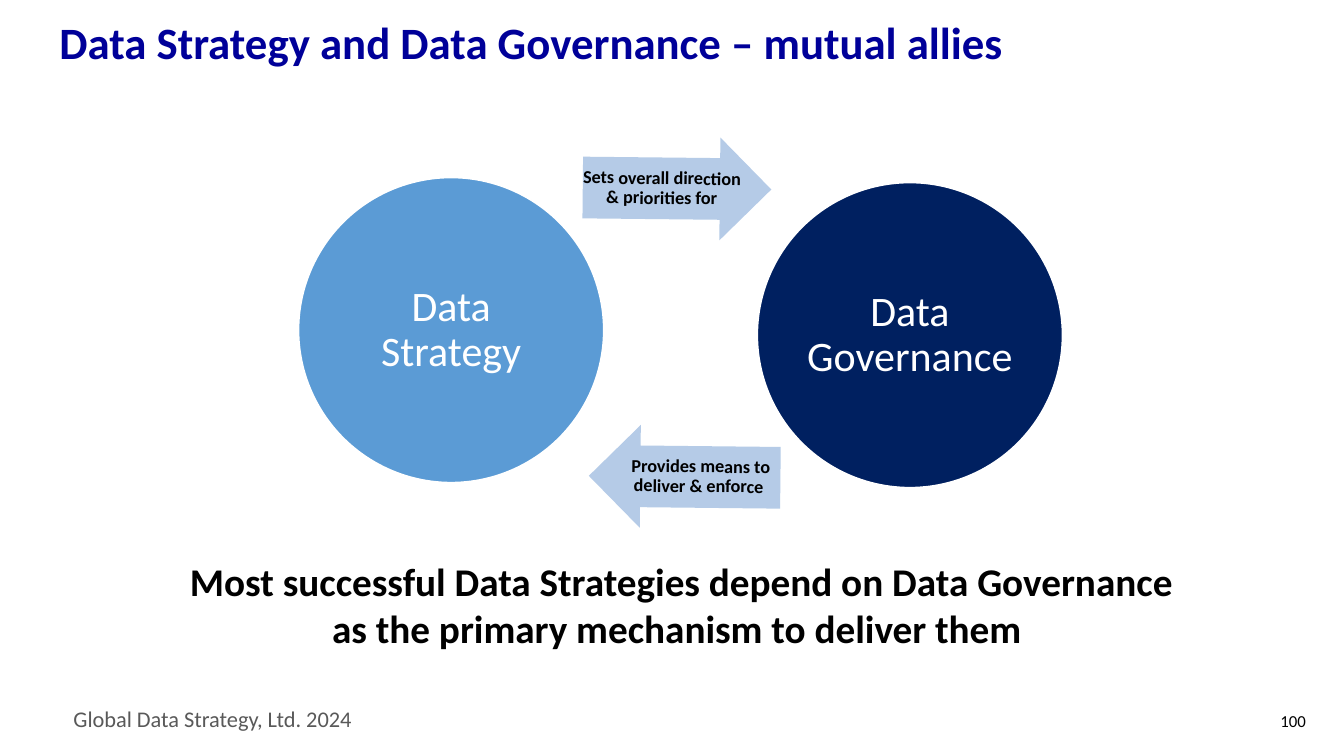
import pptx
import pptx.dml.color
import pptx.enum.shapes
import pptx.enum.text
import pptx.util

Inches = pptx.util.Inches
Align = pptx.enum.text.PP_ALIGN
Anchor = pptx.enum.text.MSO_ANCHOR
Preset = pptx.enum.shapes.MSO_SHAPE

CIRCLE_SIZE = 3.03
CIRCLE_LABEL_SIZE = 2.14
ARROW_HEIGHT = 1.02
ARROW_LABEL_HEIGHT = 0.61
TILT = 0.6

TITLE = "Data Strategy and Data Governance – mutual allies"
MESSAGE = ("Most successful Data Strategies depend on Data Governance "
           "as the primary mechanism to deliver them ")
FOOTER = "Global Data Strategy, Ltd. 2024"
PAGE_NUMBER = "100"

CIRCLES = [
    {"text": "Data Strategy", "left": 2.96, "top": 1.76, "fill": "5B9BD5"},
    {"text": "Data Governance ", "left": 7.51, "top": 1.81, "fill": "002060"},
]
ARROWS = [
    {"text": "Sets overall direction & priorities for", "left": 5.78, "top": 1.36,
     "width": 1.87, "turn": 0, "label_left": 5.78, "label_width": 1.57},
    {"text": "Provides means to deliver & enforce ", "left": 5.84, "top": 4.22,
     "width": 1.9, "turn": 180, "label_left": 6.15, "label_width": 1.6},
]


def color(value):
    return pptx.dml.color.RGBColor.from_string(value)


def add_text(slide, text, box, size, font_color="000000", bold=False,
             align=Align.LEFT, anchor=Anchor.TOP, margin=None, spacing=None):
    shape = slide.shapes.add_textbox(*map(Inches, box))
    frame = shape.text_frame
    frame.text = text
    frame.word_wrap = True
    frame.vertical_anchor = anchor
    if margin is not None:
        frame.margin_left = frame.margin_right = Inches(margin)
        frame.margin_top = frame.margin_bottom = Inches(margin)
    paragraph = frame.paragraphs[0]
    paragraph.alignment = align
    if spacing:
        paragraph.line_spacing = spacing
    font = paragraph.runs[0].font
    font.name = "Calibri"
    font.size = pptx.util.Pt(size)
    font.bold = bold
    font.color.rgb = color(font_color)
    return shape


def add_filled_shape(slide, preset, box, fill):
    shape = slide.shapes.add_shape(preset, *map(Inches, box))
    shape.shadow.inherit = False
    shape.fill.solid()
    shape.fill.fore_color.rgb = color(fill)
    shape.line.fill.background()
    return shape


def add_circle(slide, circle):
    left, top = circle["left"], circle["top"]
    shape = add_filled_shape(slide, Preset.OVAL,
                             (left, top, CIRCLE_SIZE, CIRCLE_SIZE), circle["fill"])
    shape.line.color.rgb = color("FFFFFF")
    shape.line.width = pptx.util.Pt(1.35)
    inset = (CIRCLE_SIZE - CIRCLE_LABEL_SIZE) / 2
    add_text(slide, circle["text"],
             (left + inset, top + inset, CIRCLE_LABEL_SIZE, CIRCLE_LABEL_SIZE),
             30, "FFFFFF", align=Align.CENTER, anchor=Anchor.MIDDLE,
             margin=0.04, spacing=0.9)


def add_arrow(slide, arrow):
    shape = add_filled_shape(slide, Preset.RIGHT_ARROW,
                             (arrow["left"], arrow["top"], arrow["width"], ARROW_HEIGHT),
                             "B5CBE7")
    shape.adjustments[0] = 0.6
    shape.adjustments[1] = 0.5
    shape.rotation = arrow["turn"] + TILT
    label_top = arrow["top"] + (ARROW_HEIGHT - ARROW_LABEL_HEIGHT) / 2
    label = add_text(slide, arrow["text"],
                     (arrow["label_left"], label_top, arrow["label_width"],
                      ARROW_LABEL_HEIGHT),
                     13, bold=True, align=Align.CENTER, anchor=Anchor.MIDDLE,
                     margin=0, spacing=0.9)
    label.rotation = TILT


def main():
    presentation = pptx.Presentation()
    presentation.slide_width = Inches(13.33)
    presentation.slide_height = Inches(7.5)
    slide = presentation.slides.add_slide(presentation.slide_layouts[6])

    add_text(slide, FOOTER, (0.63, 6.95, 3.62, 0.37), 16, "595959")
    add_text(slide, TITLE, (0.49, 0.11, 11.5, 0.68), 32, "000099", bold=True,
             anchor=Anchor.MIDDLE, spacing=0.9)
    add_text(slide, PAGE_NUMBER, (12.42, 6.95, 0.63, 0.4), 12,
             align=Align.RIGHT, anchor=Anchor.MIDDLE)
    for circle, arrow in zip(CIRCLES, ARROWS):
        add_circle(slide, circle)
        add_arrow(slide, arrow)
    add_text(slide, MESSAGE, (1.66, 5.48, 10.19, 1.04), 28, bold=True,
             align=Align.CENTER)

    presentation.save("out.pptx")


if __name__ == "__main__":
    main()
